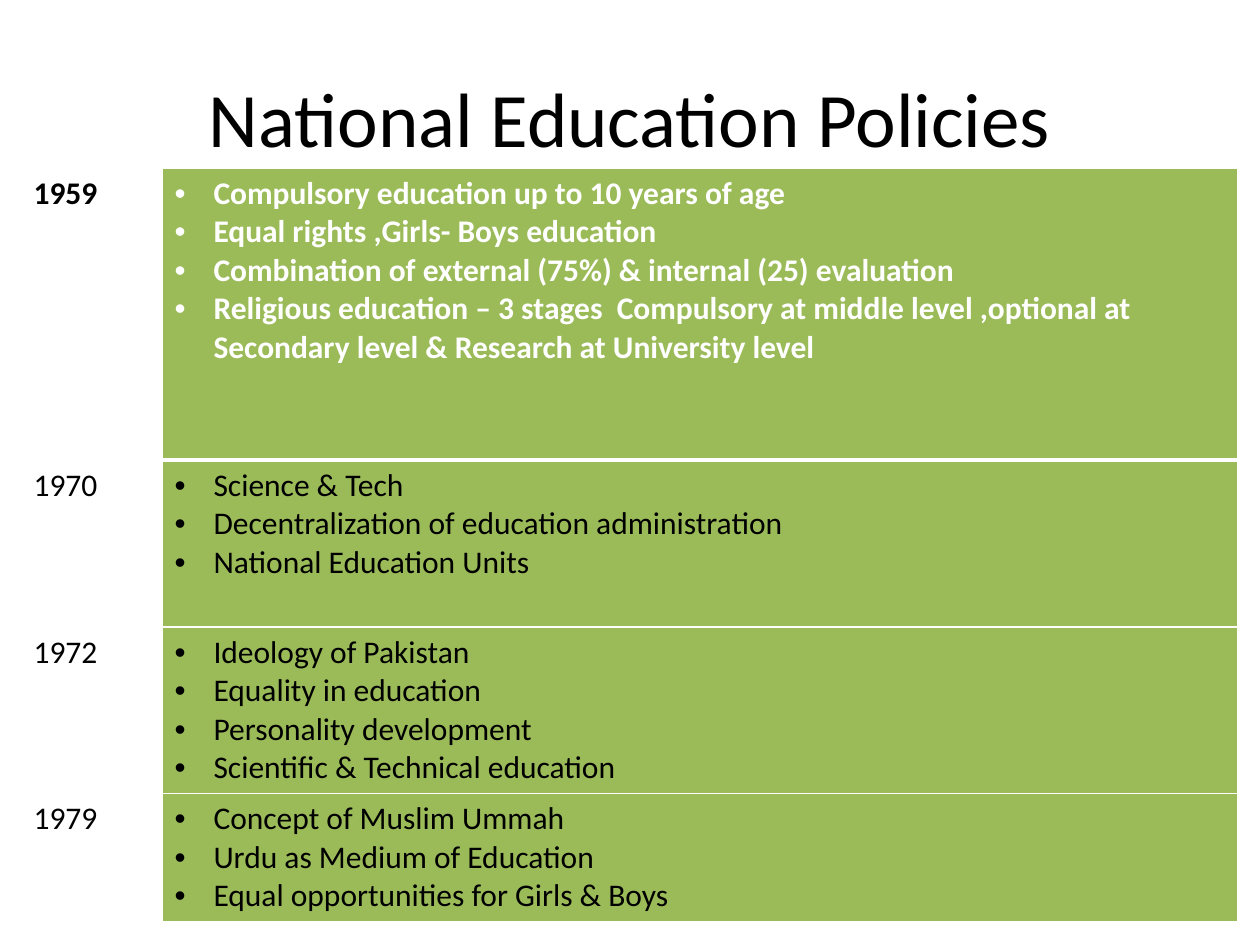
import pptx
import pptx.dml.color
import pptx.enum.text
import pptx.oxml
import pptx.oxml.ns
import pptx.util

PX_PER_INCH = 126
FONT = "Calibri"
BLACK = pptx.dml.color.RGBColor(0x00, 0x00, 0x00)
WHITE = pptx.dml.color.RGBColor(0xFF, 0xFF, 0xFF)
GREEN = pptx.dml.color.RGBColor(0x9B, 0xBB, 0x59)

COLUMN_WIDTHS = (141, 1076)
BULLET_INDENT = 39

# year, row height, points
POLICIES = [
    ("1959", 292, [
        "Compulsory education up to 10 years of age",
        "Equal rights ,Girls- Boys education",
        "Combination of external (75%) & internal (25) evaluation",
        "Religious education – 3 stages  Compulsory at middle level ,optional at "
        "Secondary level & Research at University level",
    ]),
    ("1970", 167, [
        "Science & Tech",
        "Decentralization of education administration",
        "National Education Units",
    ]),
    ("1972", 166, [
        "Ideology of Pakistan",
        "Equality in education",
        "Personality development",
        "Scientific & Technical education",
    ]),
    ("1979", 127, [
        "Concept of Muslim Ummah",
        "Urdu as Medium of Education",
        "Equal opportunities for Girls & Boys",
    ]),
]


def px(length):
    return pptx.util.Emu(round(length * 914400 / PX_PER_INCH))


def add_bullet(paragraph):
    properties = paragraph._p.get_or_add_pPr()
    properties.set("marL", str(px(BULLET_INDENT)))
    properties.set("indent", str(-px(BULLET_INDENT)))
    namespace = pptx.oxml.ns.nsdecls("a")
    properties.append(pptx.oxml.parse_xml(f'<a:buFont {namespace} typeface="Arial"/>'))
    properties.append(pptx.oxml.parse_xml(f'<a:buChar {namespace} char="•"/>'))


def write(frame, lines, size=18, color=BLACK, bold=False, bullets=False, align=None):
    """Fill a text frame with one paragraph for each line."""
    for index, line in enumerate(lines):
        paragraph = frame.add_paragraph() if index else frame.paragraphs[0]
        if bullets:
            add_bullet(paragraph)
        paragraph.alignment = align
        run = paragraph.add_run()
        run.text = line
        run.font.name = FONT
        run.font.size = pptx.util.Pt(size)
        run.font.bold = bold
        run.font.color.rgb = color


def set_borders(cell, **widths):
    """Draw white borders; widths are points, keyed by L, R, T and B."""
    properties = cell._tc.get_or_add_tcPr()
    for position, side in enumerate("LRTB"):
        width = pptx.util.Pt(widths.get(side, 1))
        properties.insert(position, pptx.oxml.parse_xml(
            f'<a:ln{side} {pptx.oxml.ns.nsdecls("a")} w="{width}">'
            f'<a:solidFill><a:srgbClr val="{WHITE}"/></a:solidFill></a:ln{side}>'))


def fill_cell(cell, lines, fill, first, **text_format):
    write(cell.text_frame, lines, bold=first, **text_format)
    cell.fill.solid()
    cell.fill.fore_color.rgb = fill
    set_borders(cell, B=3 if first else 1)


def add_title(slide, text):
    title = slide.shapes.title
    title.left, title.top, title.width, title.height = map(px, (63, 38, 1134, 157))
    title.text_frame.vertical_anchor = pptx.enum.text.MSO_ANCHOR.MIDDLE
    write(title.text_frame, [text], size=44, align=pptx.enum.text.PP_ALIGN.CENTER)


def add_policy_table(slide):
    total_height = sum(height for _, height, _ in POLICIES)
    policies = slide.shapes.add_table(
        len(POLICIES), len(COLUMN_WIDTHS),
        px(21), px(168), px(sum(COLUMN_WIDTHS)), px(total_height)).table
    policies.first_row = False
    policies.horz_banding = False
    for column, width in zip(policies.columns, COLUMN_WIDTHS):
        column.width = px(width)
    for index, (year, height, points) in enumerate(POLICIES):
        first = index == 0
        policies.rows[index].height = px(height)
        fill_cell(policies.cell(index, 0), [year], WHITE, first)
        fill_cell(policies.cell(index, 1), points, GREEN, first,
                  color=WHITE if first else BLACK, bullets=True)


def main():
    presentation = pptx.Presentation()
    presentation.slide_width = px(1260)
    presentation.slide_height = px(945)
    slide = presentation.slides.add_slide(presentation.slide_layouts[5])
    add_title(slide, "National Education Policies")
    add_policy_table(slide)
    presentation.save("out.pptx")


if __name__ == "__main__":
    main()
